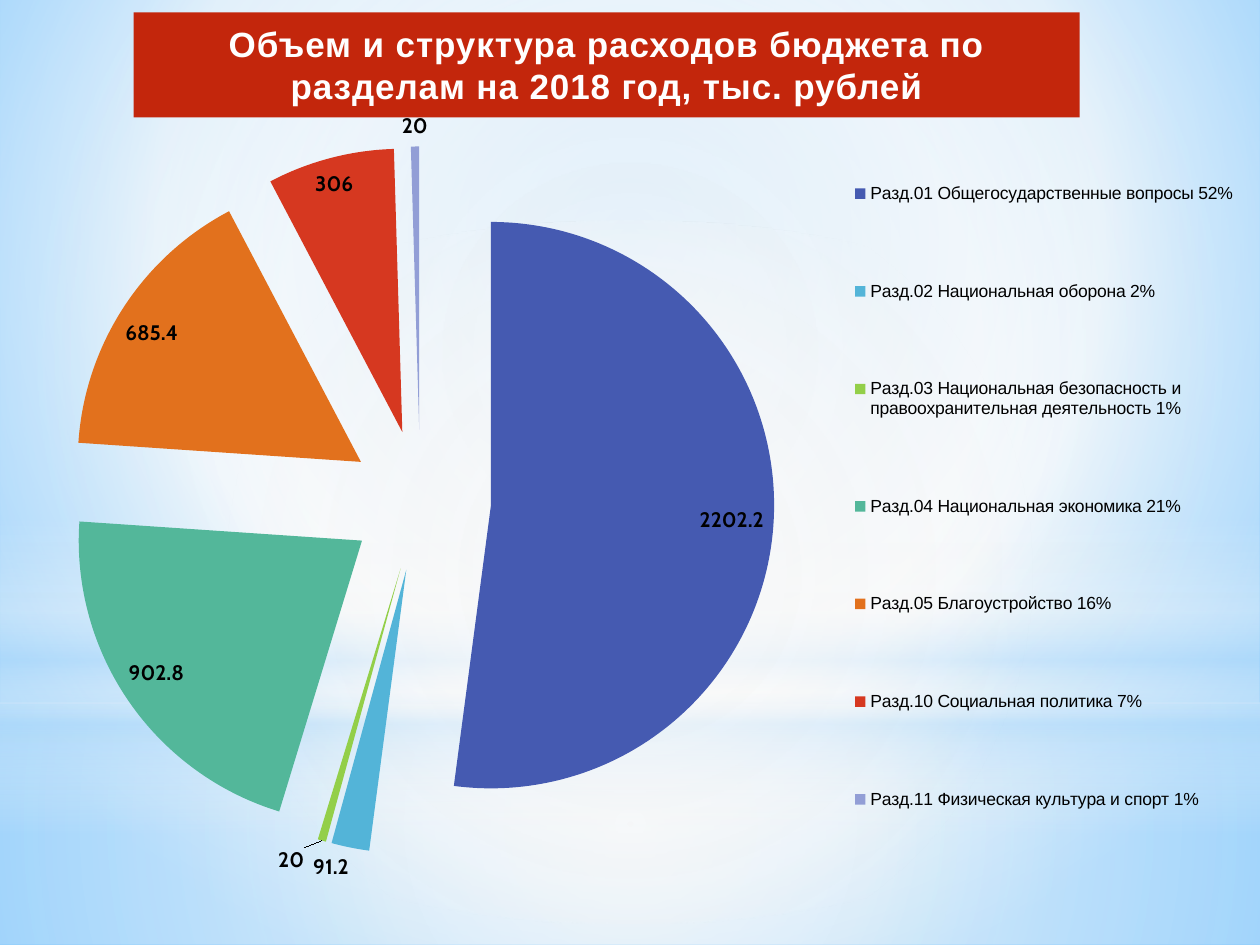
from lxml import etree
from pptx import Presentation
from pptx.chart.data import CategoryChartData
from pptx.dml.color import RGBColor
from pptx.enum.chart import XL_CHART_TYPE as ChartType
from pptx.enum.chart import XL_LABEL_POSITION as LabelPosition
from pptx.enum.chart import XL_LEGEND_POSITION as LegendPosition
from pptx.enum.shapes import MSO_SHAPE as Preset
from pptx.enum.text import MSO_ANCHOR as Anchor
from pptx.enum.text import MSO_AUTO_SIZE as AutoSize
from pptx.enum.text import PP_ALIGN as Align
from pptx.oxml import parse_xml
from pptx.oxml.ns import nsdecls, qn
from pptx.util import Inches, Pt

CENTER = (50, 50, 50, 50)

# Budget section, amount, slice colour
SECTIONS = [
    ("Разд.01 Общегосударственные вопросы 52%", 2202.2, "455AB1"),
    ("Разд.02 Национальная оборона 2%", 91.2, "53B4D8"),
    ("Разд.03 Национальная безопасность и правоохранительная деятельность 1%", 20, "93CF49"),
    ("Разд.04 Национальная экономика 21%", 902.8, "53B79A"),
    ("Разд.05 Благоустройство 16%", 685.4, "E2711D"),
    ("Разд.10 Социальная политика 7%", 306, "D63820"),
    ("Разд.11 Физическая культура и спорт 1%", 20, "929ED6"),
]


def color(value):
    return RGBColor.from_string(value)


def set_font(font, name, size, fill, bold=False):
    font.name, font.size, font.bold = name, Pt(size), bold
    font.color.rgb = color(fill)


def write_text(frame, text, font="Arial", size=18, fill="000000", bold=False,
               align=Align.LEFT, spacing=0, outline=None):
    paragraph = frame.paragraphs[0]
    paragraph.alignment = align
    run = paragraph.add_run()
    run.text = text
    set_font(run.font, font, size, fill, bold)
    properties = run.font._element
    properties.set("spc", str(round(spacing * 100)))
    if outline:
        properties.insert(0, parse_xml(
            f'<a:ln {nsdecls("a")} w="12700"><a:solidFill>'
            f'<a:srgbClr val="{outline}"/></a:solidFill></a:ln>'))


def gradient(stops, center=None, angle=0):
    """Gradient fill; each stop is (position, colour, opacity) in percent."""
    stop_xml = "".join(
        f'<a:gs pos="{position * 1000}"><a:srgbClr val="{value}">'
        f'<a:alpha val="{opacity * 1000}"/></a:srgbClr></a:gs>'
        for position, value, opacity in stops)
    if center:
        sides = " ".join(f'{side}="{part * 1000}"' for side, part in zip("ltrb", center))
        direction = f'<a:path path="circle"><a:fillToRect {sides}/></a:path>'
    else:
        direction = f'<a:lin ang="{angle * 60000}" scaled="0"/>'
    return parse_xml(f'<a:gradFill {nsdecls("a")} rotWithShape="1">'
                     f'<a:gsLst>{stop_xml}</a:gsLst>{direction}</a:gradFill>')


def manual_layout(x, y, width, height, inner=False):
    target = '<c:layoutTarget val="inner"/>' if inner else ""
    values = "".join(f'<c:{tag} val="{value}"/>' for tag, value in
                     zip("xywh", (x, y, width, height)))
    return parse_xml(f'<c:layout {nsdecls("c")}><c:manualLayout>{target}'
                     f'<c:xMode val="edge"/><c:yMode val="edge"/>{values}'
                     f'</c:manualLayout></c:layout>')


class BudgetSlide:
    font = "Arial"
    chart_font = "Cabin"
    title_fill = "C3260C"

    def __init__(self, presentation):
        self.slide = presentation.slides.add_slide(presentation.slide_layouts[5])

    def background(self, stops, center):
        self.slide.background.fill.solid()
        properties = self.slide._element.find(".//" + qn("p:bgPr"))
        properties.replace(properties[0], gradient(stops, center))

    def glow(self, preset, top, height, stops, **direction):
        shape = self.slide.shapes.add_shape(
            preset, 0, Inches(top), Inches(10), Inches(height))
        shape.shadow.inherit = False
        shape.line.fill.background()
        shape.fill.solid()
        properties = shape._element.spPr
        properties.replace(properties.find(qn("a:solidFill")), gradient(stops, **direction))

    def title(self, text, left, top, width, height):
        shape = self.slide.shapes.title
        shape.left, shape.top = Inches(left), Inches(top)
        shape.width, shape.height = Inches(width), Inches(height)
        shape.fill.solid()
        shape.fill.fore_color.rgb = color(self.title_fill)
        frame = shape.text_frame
        frame.word_wrap = True
        frame.auto_size = AutoSize.SHAPE_TO_FIT_TEXT
        frame.vertical_anchor = Anchor.MIDDLE
        write_text(frame, text, font=self.font, size=20, fill="FFFEFE", bold=True,
                   align=Align.CENTER, spacing=0.5, outline="E73214")
        # Bring the title in front of the glows
        self.slide.shapes._spTree.append(shape._element)

    def pie(self, sections, left, top, width, height):
        data = CategoryChartData()
        data.categories = [name for name, _, _ in sections]
        data.add_series("Series 1", [amount for _, amount, _ in sections])
        chart = self.slide.shapes.add_chart(
            ChartType.PIE, Inches(left), Inches(top), Inches(width), Inches(height), data).chart
        chart.has_title = False
        set_font(chart.font, self.chart_font, 18, "000000")
        plot = chart.plots[0]
        plot.vary_by_categories = True
        series = plot.series[0]

        # Slices, all pulled out from the centre
        for index, (_, _, fill) in enumerate(sections):
            point = series.points[index].format
            point.fill.solid()
            point.fill.fore_color.rgb = color(fill)
            point.line.fill.background()
        explosion = etree.Element(qn("c:explosion"), val="25")
        series._element.find(qn("c:dPt")).addprevious(explosion)

        # Amounts
        labels = series.data_labels
        labels.show_value = True
        labels.position = LabelPosition.BEST_FIT
        set_font(labels.font, self.chart_font, 12, "000000", bold=True)

        # Legend
        chart.has_legend = True
        legend = chart.legend
        legend.position = LegendPosition.RIGHT
        legend.include_in_layout = False
        set_font(legend.font, self.font, 10, "000000")
        self.place(legend._element, manual_layout(0.66, 0, 0.33, 0.96), "c:legendPos")

        # Plot area
        area = chart._chartSpace.chart.plotArea
        self.place(area, manual_layout(0, 0.05, 0.64, 0.87, inner=True))

    @staticmethod
    def place(parent, layout, after=None):
        current = parent.find(qn("c:layout"))
        if current is not None:
            parent.remove(current)
        if after:
            parent.find(qn(after)).addnext(layout)
        else:
            parent.insert(0, layout)


def main():
    presentation = Presentation()
    presentation.slide_width, presentation.slide_height = Inches(10), Inches(7.5)
    page = BudgetSlide(presentation)

    # Sky background with soft glows
    page.background([(0, "9ED5FF", 100), (60, "FFFFFF", 100), (100, "5BB9FF", 100)],
                    (20, 10, 20, 60))
    page.glow(Preset.RECTANGLE, 5.58, 1.92,
              [(0, "F9F9F9", 91), (37, "F9F9F9", 76), (100, "B4DCFA", 79)], center=CENTER)
    page.glow(Preset.RECTANGLE, 0, 5.58,
              [(0, "F9F9F9", 89), (48, "F9F9F9", 62), (100, "B4DCFA", 79)], center=CENTER)
    page.glow(Preset.RECTANGLE, 4.12, 2.5,
              [(0, "F9F9F9", 0), (29, "F9F9F9", 30), (45, "B4DCFA", 40),
               (55, "F9F9F9", 26), (65, "B4DCFA", 60), (100, "F9F9F9", 0)], angle=90)
    page.glow(Preset.OVAL, 1.75, 5.58,
              [(0, "F9F9F9", 100), (56, "F9F9F9", 0)], center=CENTER)

    # Title and chart
    page.title("Объем и структура расходов бюджета по разделам на 2018 год, тыс. рублей",
               1.06, 0.13, 7.51, 0.77)
    page.pie(SECTIONS, 0.2, 0.84, 9.8, 6.46)
    presentation.save("out.pptx")


if __name__ == "__main__":
    main()
